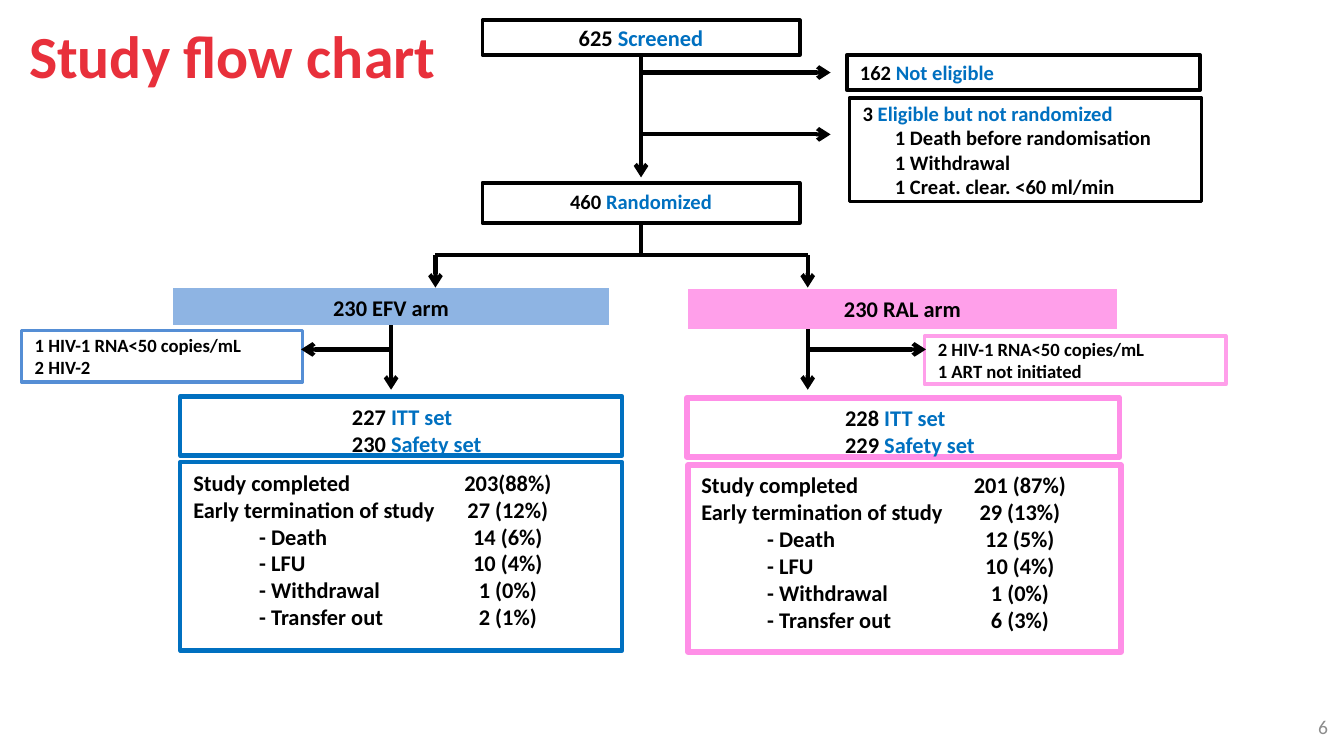
from dataclasses import dataclass

from lxml import etree
from pptx import Presentation
from pptx.dml.color import RGBColor
from pptx.enum.shapes import MSO_CONNECTOR, MSO_SHAPE
from pptx.enum.text import MSO_ANCHOR, PP_ALIGN
from pptx.oxml.ns import qn
from pptx.util import Inches, Pt

PROCESS = MSO_SHAPE.FLOWCHART_PROCESS
STRAIGHT = MSO_CONNECTOR.STRAIGHT
TOP, MIDDLE = MSO_ANCHOR.TOP, MSO_ANCHOR.MIDDLE
LEFT, CENTER, RIGHT = PP_ALIGN.LEFT, PP_ALIGN.CENTER, PP_ALIGN.RIGHT
BOTTOM_SIDE = 2


@dataclass(frozen=True)
class Theme:
    font: str = "Calibri"
    black: str = "000000"
    white: str = "FFFFFF"
    blue: str = "0070C0"
    red: str = "E8303B"
    gray: str = "8C8C8C"
    efv_fill: str = "8EB4E3"
    efv_note: str = "558ED5"
    ral_fill: str = "FF9FEA"
    ral_line: str = "FF8FE7"
    title: float = 32
    body: float = 12
    small: float = 11
    note: float = 10
    number: float = 10.5


theme = Theme()
deck = Presentation()
deck.slide_width = Inches(10)
deck.slide_height = Inches(10) * 9 // 16
page = deck.slides.add_slide(deck.slide_layouts[6])


def add_box(place, lines, size, fill=None, line=None, width=2, align=LEFT,
            anchor=MIDDLE, indents=(), tabs=()):
    """Draw a process box; each line is a (black text, blue text) pair."""
    box = page.shapes.add_shape(PROCESS, *map(Inches, place))
    box.shadow.inherit = False
    if fill:
        box.fill.solid()
        box.fill.fore_color.rgb = RGBColor.from_string(fill)
    else:
        box.fill.background()
    if line:
        box.line.color.rgb = RGBColor.from_string(line)
        box.line.width = Pt(width)
    else:
        box.line.fill.background()
    frame = box.text_frame
    frame.word_wrap = True
    frame.vertical_anchor = anchor
    for index, parts in enumerate(lines):
        para = frame.add_paragraph() if index else frame.paragraphs[0]
        para.alignment = align
        properties = para._p.get_or_add_pPr()
        if indents:
            properties.set("marL", str(Inches(indents[index])))
        if tabs:
            tab_list = etree.SubElement(properties, qn("a:tabLst"))
            for position, kind in tabs:
                etree.SubElement(tab_list, qn("a:tab"), pos=str(Inches(position)), algn=kind)
        para.font.name, para.font.size, para.font.bold = theme.font, Pt(size), True
        for text, color in zip(parts, (theme.black, theme.blue)):
            span = para.add_run()
            span.text = text
            span.font.color.rgb = RGBColor.from_string(color)
    return box


def add_line(start, end, arrow=True, source=None):
    """Draw a line, joined to the bottom of the source box if one is given."""
    line = page.shapes.add_connector(STRAIGHT, *map(Inches, (*start, *end)))
    line.line.color.rgb = RGBColor.from_string(theme.black)
    line.line.width = Pt(2.25)
    if arrow:
        etree.SubElement(line.line._get_or_add_ln(), qn("a:tailEnd"), type="arrow")
    etree.SubElement(line._element.spPr, qn("a:effectLst"))
    if source is not None:
        line.begin_connect(source, BOTTOM_SIDE)


# Title and page number
for place, text, size, color, bold, align in (
    ((-0.91, 0.08, 5.28, 0.65), "Study flow chart", theme.title, theme.red, True, CENTER),
    ((7.65, 5.26, 2.33, 0.3), "6", theme.number, theme.gray, False, RIGHT),
):
    box = page.shapes.add_textbox(*map(Inches, place))
    box.text_frame.word_wrap = True
    box.text_frame.vertical_anchor = MIDDLE
    para = box.text_frame.paragraphs[0]
    para.text = text
    para.alignment = align
    para.font.name, para.font.size, para.font.bold = theme.font, Pt(size), bold
    para.font.color.rgb = RGBColor.from_string(color)

# Screening and randomisation
black_box = {"fill": theme.white, "line": theme.black}
screened = add_box((3.59, 0.15, 2.36, 0.26), [("625 ", "Screened")], theme.body,
                   align=CENTER, **black_box)
randomized = add_box((3.59, 1.36, 2.36, 0.3), [("460 ", "Randomized")], theme.small,
                     align=CENTER, anchor=TOP, **black_box)
add_box((6.3, 0.41, 2.63, 0.26), [("162 ", "Not eligible")], theme.small, **black_box)
add_box((6.32, 0.73, 2.62, 0.77),
        [("3", " Eligible but not randomized"), ("1 Death before randomisation",),
         ("1 Withdrawal",), ("1 Creat. clear. <60 ml/min",)],
        theme.small, indents=(0, 0.24, 0.24, 0.24), **black_box)

trunk = 4.77
add_line((trunk, 0.41), (trunk, 1.32), source=screened)
for exit_top in (0.54, 1):
    add_line((trunk, exit_top), (6.18, exit_top))
add_line((trunk, 1.66), (trunk, 1.9), arrow=False, source=randomized)
add_line((3.24, 1.9), (6.01, 1.9), arrow=False)

# Treatment arms
outcomes = ("Study completed", "Early termination of study",
            "\t- Death", "\t- LFU", "\t- Withdrawal", "\t- Transfer out")
arms = (
    {"name": "230 EFV arm", "header": (1.29, 2.14, 3.24, 0.28), "fill": theme.efv_fill,
     "note": ("1 HIV-1 RNA<50 copies/mL", "2 HIV-2"), "note_line": theme.efv_note,
     "note_place": (0.16, 2.46, 2.09, 0.38), "note_tip": 2.24,
     "sets": ("227", "230"), "sets_place": (1.34, 2.95, 3.29, 0.44), "sets_indent": 1.18,
     "results": ("203(88%)", "27 (12%)", "14 (6%)", "10 (4%)", "1 (0%)", "2 (1%)"),
     "results_place": (1.34, 3.44, 3.29, 1.4), "results_tab": 2.34,
     "line": theme.blue, "width": 2.25, "branch": 3.24, "stem": 2.91, "joined": True},
    {"name": "230 RAL arm", "header": (5.12, 2.15, 3.19, 0.3), "fill": theme.ral_fill,
     "note": ("2 HIV-1 RNA<50 copies/mL", "1 ART not initiated"), "note_line": theme.ral_fill,
     "note_place": (6.88, 2.5, 2.24, 0.36), "note_tip": 6.89,
     "sets": ("228", "229"), "sets_place": (5.11, 2.96, 3.22, 0.44), "sets_indent": 1.08,
     "results": ("201 (87%)", "29 (13%)", "12 (5%)", "10 (4%)", "1 (0%)", "6 (3%)"),
     "results_place": (5.12, 3.46, 3.22, 1.39), "results_tab": 2.37,
     "line": theme.ral_line, "width": 3, "branch": 6.01, "stem": 6.01, "joined": False},
)
for arm in arms:
    header = add_box(arm["header"], [(arm["name"],)], theme.body, fill=arm["fill"],
                     align=CENTER, anchor=TOP)
    add_box(arm["note_place"], [(text,) for text in arm["note"]], theme.note,
            fill=theme.white, line=arm["note_line"])
    add_box(arm["results_place"],
            [(f"{label}\t{value}",) for label, value in zip(outcomes, arm["results"])],
            theme.body, line=arm["line"], width=arm["width"], anchor=TOP,
            tabs=((0.49, "l"), (arm["results_tab"], "ctr")))
    add_box(arm["sets_place"],
            [(f"{count} ", label) for count, label in zip(arm["sets"], ("ITT set", "Safety set"))],
            theme.body, line=arm["line"], width=arm["width"], anchor=TOP,
            indents=(arm["sets_indent"],) * 2)
    add_line((arm["branch"], 1.9), (arm["branch"], 2.14))
    add_line((arm["stem"], 2.45), (arm["stem"], 2.9), source=header if arm["joined"] else None)
    add_line((arm["stem"], 2.6), (arm["note_tip"], 2.6))

deck.save("out.pptx")
